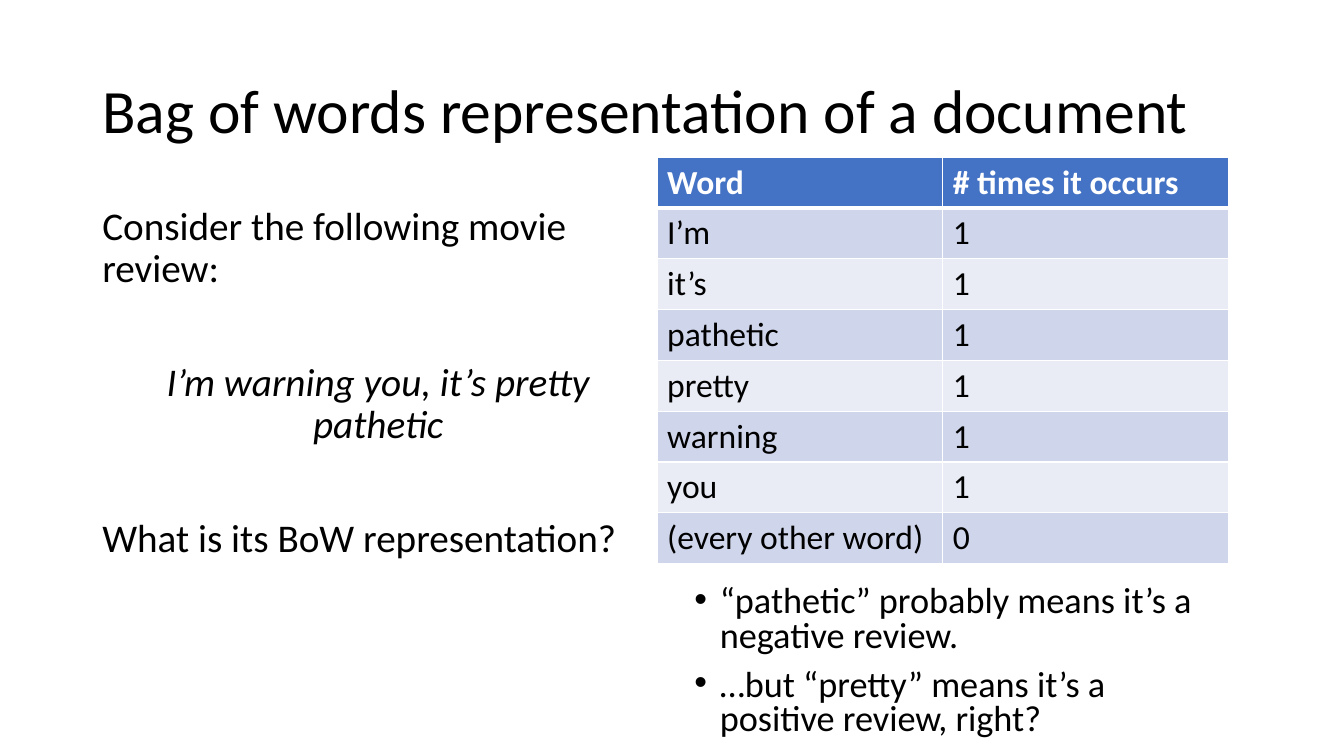
from lxml.etree import SubElement
from pptx import Presentation
from pptx.dml.color import RGBColor
from pptx.enum.text import MSO_ANCHOR, PP_ALIGN
from pptx.oxml.ns import qn
from pptx.util import Cm, Pt

BLACK = RGBColor(0x00, 0x00, 0x00)
WHITE = RGBColor(0xFF, 0xFF, 0xFF)
HEADER_BLUE = RGBColor(0x44, 0x72, 0xC4)
BAND_DARK = RGBColor(0xCF, 0xD5, 0xEA)
BAND_LIGHT = RGBColor(0xE9, 0xEB, 0xF5)

FONT = "Calibri"
WORD_COUNTS = [
    ("Word", "# times it occurs"),
    ("I’m", "1"),
    ("it’s", "1"),
    ("pathetic", "1"),
    ("pretty", "1"),
    ("warning", "1"),
    ("you", "1"),
    ("(every other word)", "0"),
]
REMARKS = [
    "“pathetic” probably means it’s a negative review.",
    "…but “pretty” means it’s a positive review, right?",
]


def set_font(para, size, color=BLACK, bold=False, italic=False):
    font = para.font
    font.name = FONT
    font.size = Pt(size)
    font.color.rgb = color
    font.bold = bold
    font.italic = italic


def add_text_box(page, left, top, width, height, anchor=MSO_ANCHOR.TOP):
    box = page.shapes.add_textbox(Cm(left), Cm(top), Cm(width), Cm(height))
    frame = box.text_frame
    frame.word_wrap = True
    frame.vertical_anchor = anchor
    return frame


def add_para(frame, text, size, line_spacing=0.9, space_before=10, italic=False):
    para = frame.paragraphs[0]
    if para.text:
        para = frame.add_paragraph()
    para.text = text
    para.line_spacing = line_spacing
    para.space_before = Pt(space_before)
    set_font(para, size, italic=italic)
    return para


def add_bullet(para):
    properties = para._p.get_or_add_pPr()
    indent = Cm(0.64)
    properties.set("marL", str(indent))
    properties.set("indent", str(-indent))
    SubElement(properties, qn("a:buFont"), typeface="Arial")
    SubElement(properties, qn("a:buChar"), char="•")


def add_border(cell, side, width):
    line = SubElement(cell._tc.get_or_add_tcPr(), qn(f"a:ln{side}"), w=str(Pt(width)))
    fill = SubElement(line, qn("a:solidFill"))
    SubElement(fill, qn("a:srgbClr"), val=str(WHITE))


def style_cell(cell, row):
    header = row == 0
    for side in "LRTB":
        thick = (header and side == "B") or (row == 1 and side == "T")
        add_border(cell, side, 3 if thick else 1)
    cell.fill.solid()
    if header:
        cell.fill.fore_color.rgb = HEADER_BLUE
    else:
        cell.fill.fore_color.rgb = BAND_DARK if row % 2 else BAND_LIGHT
    set_font(cell.text_frame.paragraphs[0], 24, WHITE if header else BLACK, bold=header)


def add_word_table(page):
    rows, columns = len(WORD_COUNTS), len(WORD_COUNTS[0])
    frame = page.shapes.add_table(
        rows, columns, Cm(16.56), Cm(3.96), Cm(14.4), Cm(1.28 * rows)
    )
    for row, values in enumerate(WORD_COUNTS):
        for column, value in enumerate(values):
            cell = frame.table.cell(row, column)
            cell.text = value
            style_cell(cell, row)


def add_title(page):
    frame = add_text_box(page, 2.33, 1.01, 29.21, 3.68, MSO_ANCHOR.MIDDLE)
    add_para(frame, "Bag of words representation of a document", 44, space_before=0)


def add_review(page):
    frame = add_text_box(page, 2.33, 5.07, 14.4, 12.09)
    add_para(frame, "Consider the following movie review:", 28)
    quote = add_para(
        frame, "I’m warning you, it’s pretty pathetic", 28, space_before=51, italic=True
    )
    quote.alignment = PP_ALIGN.CENTER
    add_para(frame, "What is its BoW representation?", 28, space_before=51)


def add_remarks(page):
    frame = add_text_box(page, 17.25, 14.63, 13.97, 4.34)
    for remark in REMARKS:
        add_bullet(add_para(frame, remark, 25.9, line_spacing=0.8))


def main():
    deck = Presentation()
    deck.slide_width = Cm(33.87)
    deck.slide_height = Cm(19.05)
    page = deck.slides.add_slide(deck.slide_layouts[6])
    add_title(page)
    add_review(page)
    add_word_table(page)
    add_remarks(page)
    deck.save("out.pptx")


if __name__ == "__main__":
    main()
